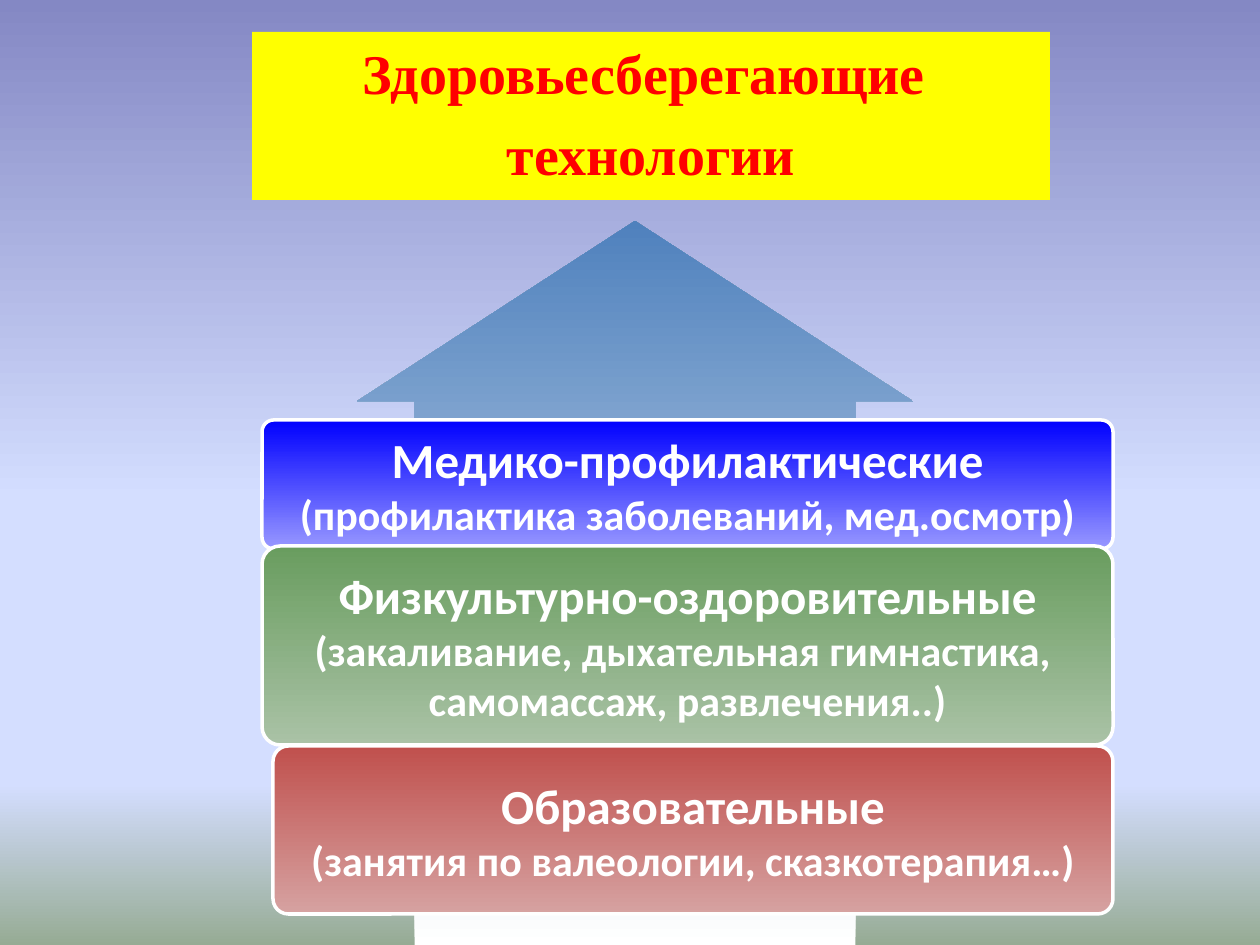
from lxml.etree import SubElement
from pptx import Presentation
from pptx.dml.color import RGBColor
from pptx.enum.shapes import MSO_SHAPE as Preset
from pptx.enum.text import MSO_ANCHOR as Anchor, PP_ALIGN as Align
from pptx.oxml.ns import qn
from pptx.util import Pt

EMU_PER_PX = 914400 / 126
SLIDE_W, SLIDE_H = 1260, 945

WHITE = RGBColor(0xFF, 0xFF, 0xFF)
YELLOW = RGBColor(0xFF, 0xFF, 0x00)
RED = RGBColor(0xFF, 0x00, 0x00)
ARROW_BLUE = RGBColor(0x4F, 0x81, 0xBD)
SKY = RGBColor(0xD4, 0xDE, 0xFF)
BACKGROUND = [(0, RGBColor(0x84, 0x88, 0xC4)), (53, SKY), (83, SKY),
              (100, RGBColor(0x96, 0xAB, 0x94))]
MEDICAL = (RGBColor(0x00, 0x00, 0xFF), RGBColor(0x98, 0x98, 0xFF))
PHYSICAL = (RGBColor(0x69, 0x9D, 0x5F), RGBColor(0xAA, 0xC2, 0xA6))
EDUCATIONAL = (RGBColor(0xC0, 0x50, 0x4D), RGBColor(0xD6, 0xA2, 0xA1))

TECHNOLOGIES = [
    ((262, 420, 851, 129), MEDICAL, "Медико-профилактические",
     ["(профилактика заболеваний, мед.осмотр)"]),
    ((262, 546, 851, 199), PHYSICAL, "Физкультурно-оздоровительные",
     ["(закаливание, дыхательная гимнастика, ", "самомассаж, развлечения..)"]),
    ((273, 746, 840, 168), EDUCATIONAL, "Образовательные",
     ["(занятия по валеологии, сказкотерапия…)"]),
]


def px(length):
    return round(length * EMU_PER_PX)


def fill_gradient(fill, element, stops, angle):
    """Fill with (percent, colour) stops; angle is counter-clockwise."""
    fill.gradient()
    fill.gradient_angle = angle
    stop_list = element.find(".//" + qn("a:gsLst"))
    stop_list.clear()
    for percent, color in stops:
        stop = SubElement(stop_list, qn("a:gs"), pos=str(percent * 1000))
        SubElement(stop, qn("a:srgbClr"), val=str(color))


def add_preset(slide, preset, box, adjustments=()):
    shape = slide.shapes.add_shape(preset, *map(px, box))
    shape.shadow.inherit = False
    shape.line.fill.background()
    for index, value in enumerate(adjustments):
        shape.adjustments[index] = value
    return shape


def write_line(frame, text, *, size, color, font, first=False, before=0):
    paragraph = frame.paragraphs[0] if first else frame.add_paragraph()
    paragraph.alignment = Align.CENTER
    if before and not first:
        paragraph.space_before = Pt(before)
    run = paragraph.add_run()
    run.text = text
    run.font.size = Pt(size)
    run.font.name = font
    run.font.bold = True
    run.font.color.rgb = color


def add_title(slide, box, lines):
    banner = add_preset(slide, Preset.RECTANGLE, box)
    banner.fill.solid()
    banner.fill.fore_color.rgb = YELLOW
    frame = banner.text_frame
    frame.word_wrap = True
    frame.vertical_anchor = Anchor.TOP
    for index, line in enumerate(lines):
        write_line(frame, line, size=32, color=RED, font="Times New Roman",
                   first=index == 0, before=8)


def add_rising_arrow(slide, box):
    """Turn a right arrow upwards so that it fills the box."""
    left, top, width, height = box
    shift = (height - width) / 2
    arrow = add_preset(slide, Preset.RIGHT_ARROW,
                       (left - shift, top + shift, height, width), (0.793, 0.324))
    arrow.rotation = 270
    fill_gradient(arrow.fill, arrow.element, [(0, WHITE), (100, ARROW_BLUE)], 0)


def add_technology(slide, box, colors, heading, details):
    card = add_preset(slide, Preset.ROUNDED_RECTANGLE, box, (0.091,))
    fill_gradient(card.fill, card.element, zip((0, 100), colors), 270)
    card.line.color.rgb = WHITE
    card.line.width = Pt(2)
    frame = card.text_frame
    frame.word_wrap = False
    frame.vertical_anchor = Anchor.MIDDLE
    write_line(frame, heading, size=28, color=WHITE, font="Calibri", first=True)
    for detail in details:
        write_line(frame, detail, size=24, color=WHITE, font="Calibri")


def main():
    deck = Presentation()
    deck.slide_width, deck.slide_height = px(SLIDE_W), px(SLIDE_H)
    slide = deck.slides.add_slide(deck.slide_layouts[6])
    fill_gradient(slide.background.fill, slide.element, BACKGROUND, 270)
    add_title(slide, (252, 32, 798, 168), ["Здоровьесберегающие ", "технологии"])
    add_rising_arrow(slide, (357, 221, 556, 724))
    for technology in TECHNOLOGIES:
        add_technology(slide, *technology)
    deck.save("out.pptx")


if __name__ == "__main__":
    main()
